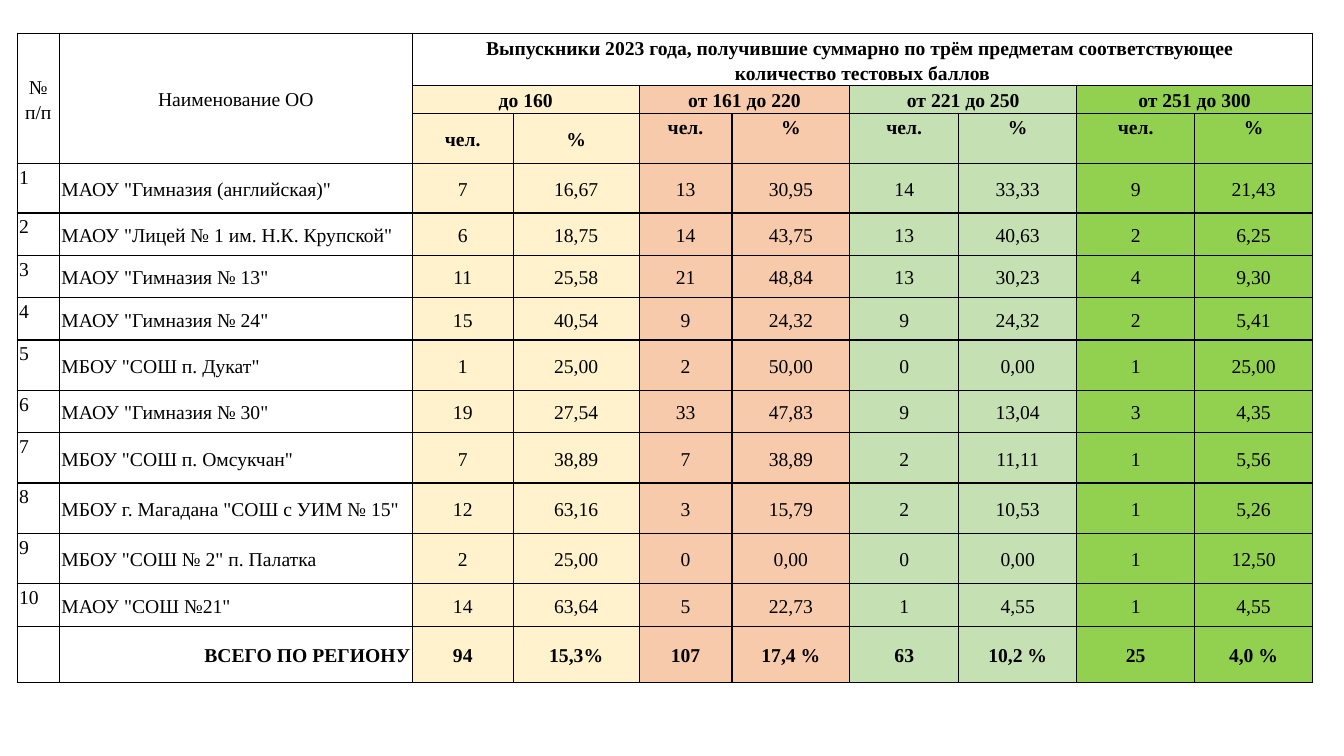
from dataclasses import dataclass

from lxml import etree
from pptx import Presentation
from pptx import util as u
from pptx.dml.color import RGBColor
from pptx.enum import text as t
from pptx.oxml import ns


@dataclass(frozen=True)
class Theme:
    font: str = "Times New Roman"
    size: int = 14
    ink: str = "000000"
    border_width: float = 1
    line_spacing: float = 1.15
    side_margin: float = 0.02
    bands: tuple = ("FFF2CC", "F7CAAC", "C5E0B3", "92D050")


THEME = Theme()
LEFT, CENTER, RIGHT = t.PP_ALIGN.LEFT, t.PP_ALIGN.CENTER, t.PP_ALIGN.RIGHT
TOP, MIDDLE = t.MSO_ANCHOR.TOP, t.MSO_ANCHOR.MIDDLE

# Table content
HEADING = ("Выпускники 2023 года, получившие суммарно по трём предметам соответствующее \n"
           "количество тестовых баллов")
SCORE_BANDS = ["до 160", "от 161 до 220", "от 221 до 250", "от 251 до 300"]
SCHOOLS = [
    ('МАОУ "Гимназия (английская)"', "7", "16,67", "13", "30,95", "14", "33,33", "9", "21,43"),
    ('МАОУ "Лицей № 1 им. Н.К. Крупской"', "6", "18,75", "14", "43,75", "13", "40,63", "2", "6,25"),
    ('МАОУ "Гимназия № 13"', "11", "25,58", "21", "48,84", "13", "30,23", "4", "9,30"),
    ('МАОУ "Гимназия № 24"', "15", "40,54", "9", "24,32", "9", "24,32", "2", "5,41"),
    ('МБОУ "СОШ п. Дукат"', "1", "25,00", "2", "50,00", "0", "0,00", "1", "25,00"),
    ('МАОУ "Гимназия № 30"', "19", "27,54", "33", "47,83", "9", "13,04", "3", "4,35"),
    ('МБОУ "СОШ п. Омсукчан"', "7", "38,89", "7", "38,89", "2", "11,11", "1", "5,56"),
    ('МБОУ г. Магадана "СОШ с УИМ № 15"', "12", "63,16", "3", "15,79", "2", "10,53", "1", "5,26"),
    ('МБОУ "СОШ № 2" п. Палатка', "2", "25,00", "0", "0,00", "0", "0,00", "1", "12,50"),
    ('МАОУ "СОШ №21"', "14", "63,64", "5", "22,73", "1", "4,55", "1", "4,55"),
]
TOTAL = ("ВСЕГО ПО РЕГИОНУ", "94", "15,3%", "107", "17,4 %", "63", "10,2 %", "25", "4,0 %")

# Table geometry, inches
COLUMNS = [0.42, 3.5, 1, 1.25, 0.92, 1.17, 1.08, 1.17, 1.17, 1.17]
HEADER_ROWS = [0.52, 0.28, 0.28]
SCHOOL_ROWS = [0.49, 0.42, 0.42, 0.42, 0.5, 0.42, 0.5, 0.5, 0.5, 0.42]
ROWS = HEADER_ROWS + SCHOOL_ROWS + [0.56]
FIRST_BAND = 2


def set_borders(cell):
    properties = cell._tc.get_or_add_tcPr()
    for side in ("a:lnL", "a:lnR", "a:lnT", "a:lnB"):
        line = etree.SubElement(properties, ns.qn(side), w=str(u.Pt(THEME.border_width)))
        fill = etree.SubElement(line, ns.qn("a:solidFill"))
        etree.SubElement(fill, ns.qn("a:srgbClr"), val=THEME.ink)


def style_cell(cell, column):
    """Borders, margins and the band colour of the column."""
    set_borders(cell)
    cell.margin_left = cell.margin_right = u.Inches(THEME.side_margin)
    cell.margin_top = cell.margin_bottom = 0
    if column < FIRST_BAND:
        cell.fill.background()
    else:
        cell.fill.solid()
        band = (column - FIRST_BAND) // 2
        cell.fill.fore_color.rgb = RGBColor.from_string(THEME.bands[band])


def write(cell, words, align=CENTER, anchor=MIDDLE, bold=False):
    cell.text_frame.text = words
    cell.vertical_anchor = anchor
    for paragraph in cell.text_frame.paragraphs:
        paragraph.alignment = align
        paragraph.line_spacing = THEME.line_spacing
        for run in paragraph.runs:
            run.font.name = THEME.font
            run.font.size = u.Pt(THEME.size)
            run.font.bold = bold
            run.font.color.rgb = RGBColor.from_string(THEME.ink)


def add_grid(slide):
    frame = slide.shapes.add_table(len(ROWS), len(COLUMNS), u.Inches(0.17), u.Inches(0.33),
                                   u.Inches(sum(COLUMNS)), u.Inches(sum(ROWS)))
    table = frame.table
    table.first_row = table.horz_banding = False
    for column, width in zip(table.columns, COLUMNS):
        column.width = u.Inches(width)
    for row, height in zip(table.rows, ROWS):
        row.height = u.Inches(height)
        for number, cell in enumerate(row.cells):
            style_cell(cell, number)
    return table


def fill_header(table):
    last_header = len(HEADER_ROWS) - 1
    for column, title in enumerate(("№ п/п", "Наименование ОО")):
        table.cell(0, column).merge(table.cell(last_header, column))
        write(table.cell(0, column), title)

    heading = table.cell(0, FIRST_BAND)
    heading.merge(table.cell(0, len(COLUMNS) - 1))
    heading.fill.background()
    write(heading, HEADING, bold=True)

    for band, score in enumerate(SCORE_BANDS):
        column = FIRST_BAND + 2 * band
        table.cell(1, column).merge(table.cell(1, column + 1))
        write(table.cell(1, column), score, bold=True)
        anchor = MIDDLE if band == 0 else TOP
        for offset, unit in enumerate(("чел.", "%")):
            write(table.cell(last_header, column + offset), unit, anchor=anchor, bold=True)


def fill_results(table, row, results, name_align=LEFT, bold=False):
    name, *values = results
    write(table.cell(row, 1), name, align=name_align, bold=bold)
    for column, value in enumerate(values, FIRST_BAND):
        write(table.cell(row, column), value, bold=bold)


def main():
    deck = Presentation()
    deck.slide_width, deck.slide_height = u.Inches(13.33), u.Inches(7.5)
    slide = deck.slides.add_slide(deck.slide_layouts[6])

    # Header rows
    table = add_grid(slide)
    fill_header(table)

    # Numbered schools
    for number, school in enumerate(SCHOOLS, 1):
        row = len(HEADER_ROWS) + number - 1
        write(table.cell(row, 0), str(number), align=LEFT, anchor=TOP)
        fill_results(table, row, school)

    # Regional total
    fill_results(table, len(ROWS) - 1, TOTAL, name_align=RIGHT, bold=True)

    deck.save("out.pptx")


if __name__ == "__main__":
    main()
